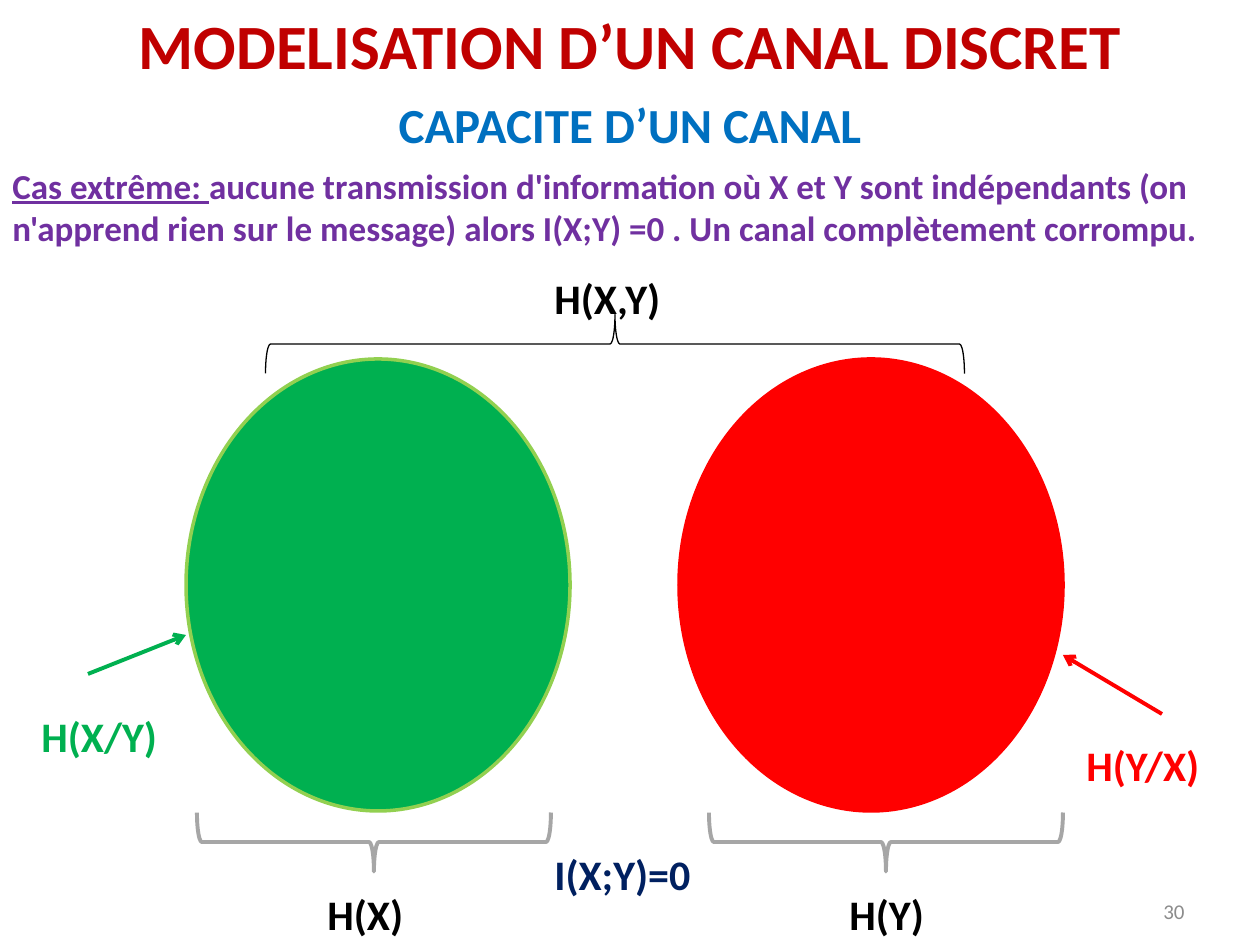
"""Build the slide on the capacity of a discrete channel in the fully corrupted case."""
import dataclasses

import lxml.etree
import pptx
import pptx.dml.color
import pptx.enum.shapes
import pptx.enum.text
import pptx.oxml.ns
import pptx.util

EMU_PER_PX = 914400 / 126
SHAPES = pptx.enum.shapes.MSO_SHAPE
ALIGN = pptx.enum.text.PP_ALIGN
ANCHOR = pptx.enum.text.MSO_ANCHOR


@dataclasses.dataclass(frozen=True)
class Theme:
    font: str = "Calibri"
    title: str = "C00000"
    subtitle: str = "0070C0"
    body: str = "7030A0"
    mutual: str = "002060"
    black: str = "000000"
    source: str = "00B050"
    source_edge: str = "92D050"
    received: str = "FF0000"
    brace: str = "A6A6A6"
    number: str = "8C8C8C"
    title_size: int = 36
    subtitle_size: int = 28
    label_size: int = 24
    body_size: int = 20
    number_size: int = 12
    thin: float = 0.75
    edge: float = 2
    thick: float = 2.25


THEME = Theme()


def px(length):
    return pptx.util.Emu(round(length * EMU_PER_PX))


def rgb(value):
    return pptx.dml.color.RGBColor.from_string(value)


def place(shape, bounds):
    shape.left, shape.top, shape.width, shape.height = map(px, bounds)


def write(box, text, *, size, color, bold=True, underline=False,
          align=ALIGN.LEFT, anchor=ANCHOR.TOP):
    frame = box.text_frame
    frame.word_wrap = True
    frame.auto_size = pptx.enum.text.MSO_AUTO_SIZE.NONE
    frame.vertical_anchor = anchor
    para = frame.paragraphs[0]
    para.alignment = align
    span = para.add_run()
    span.text = text
    font = span.font
    font.name, font.size = THEME.font, pptx.util.Pt(size)
    font.bold, font.underline = bold, underline
    font.color.rgb = rgb(color)


def add_text(page, bounds, text, **style):
    box = page.shapes.add_textbox(*map(px, bounds))
    write(box, text, **style)
    return box


def add_label(page, left, top, width, text, color):
    add_text(page, (left, top, width, 63), text, size=THEME.label_size, color=color)


def style_line(line, color, width):
    line.color.rgb = rgb(color)
    line.width = pptx.util.Pt(width)


def add_ellipse(page, left, fill, edge):
    ellipse = page.shapes.add_shape(SHAPES.OVAL, *map(px, (left, 359, 384, 452)))
    ellipse.shadow.inherit = False
    ellipse.fill.solid()
    ellipse.fill.fore_color.rgb = rgb(fill)
    style_line(ellipse.line, edge, THEME.edge)


def add_brace(page, kind, center_x, center_y, span, color, width):
    depth = 59
    bounds = (center_x - depth / 2, center_y - span / 2, depth, span)
    brace = page.shapes.add_shape(kind, *map(px, bounds))
    brace.rotation = 270
    brace.shadow.inherit = False
    brace.fill.background()
    style_line(brace.line, color, width)


def add_arrow(page, start, end, color):
    arrow = page.shapes.add_connector(
        pptx.enum.shapes.MSO_CONNECTOR.STRAIGHT, *map(px, start + end))
    style_line(arrow.line, color, THEME.thick)
    qn = pptx.oxml.ns.qn
    properties = arrow.line._get_or_add_ln()
    lxml.etree.SubElement(properties, qn("a:tailEnd"), type="arrow")
    lxml.etree.SubElement(properties.getparent(), qn("a:effectLst"))


def add_headings(page):
    title = page.shapes.title
    place(title, (0, 0, 1260, 89))
    write(title, "MODELISATION D’UN CANAL DISCRET", size=THEME.title_size,
          color=THEME.title, align=ALIGN.CENTER)
    add_text(page, (0, 88, 1260, 111), "CAPACITE D’UN CANAL",
             size=THEME.subtitle_size, color=THEME.subtitle, align=ALIGN.CENTER)
    body = {"size": THEME.body_size, "color": THEME.body}
    case = add_text(page, (0, 158, 1260, 97), "Cas extrême: ", underline=True, **body)
    write(case, "aucune transmission d'information où X et Y sont indépendants "
          "(on n'apprend rien sur le message) alors I(X;Y) =0 . "
          "Un canal complètement corrompu.", **body)


def add_diagram(page):
    add_ellipse(page, 186, THEME.source, THEME.source_edge)
    add_ellipse(page, 679, THEME.received, THEME.received)
    for center_x in (374, 886):
        add_brace(page, SHAPES.LEFT_BRACE, center_x, 842, 354, THEME.brace, THEME.thick)
    add_brace(page, SHAPES.RIGHT_BRACE, 615, 344, 699, THEME.black, THEME.thin)
    add_arrow(page, (88, 674), (186, 635), THEME.source)
    add_arrow(page, (1162, 714), (1063, 655), THEME.received)
    for label in (
        (542, 266, 158, "H(X,Y)", THEME.black),
        (29, 704, 158, "H(X/Y)", THEME.source),
        (1074, 733, 158, "H(Y/X)", THEME.received),
        (315, 882, 118, "H(X)", THEME.black),
        (837, 882, 108, "H(Y)", THEME.black),
        (542, 842, 178, "I(X;Y)=0", THEME.mutual),
    ):
        add_label(page, *label)


def main():
    deck = pptx.Presentation()
    deck.slide_width, deck.slide_height = px(1260), px(945)
    page = deck.slides.add_slide(deck.slide_layouts.get_by_name("Title Only"))
    add_diagram(page)
    add_headings(page)
    add_text(page, (903, 886, 294, 50), "30", size=THEME.number_size,
             color=THEME.number, bold=False, align=ALIGN.RIGHT, anchor=ANCHOR.MIDDLE)
    deck.save("out.pptx")


if __name__ == "__main__":
    main()
